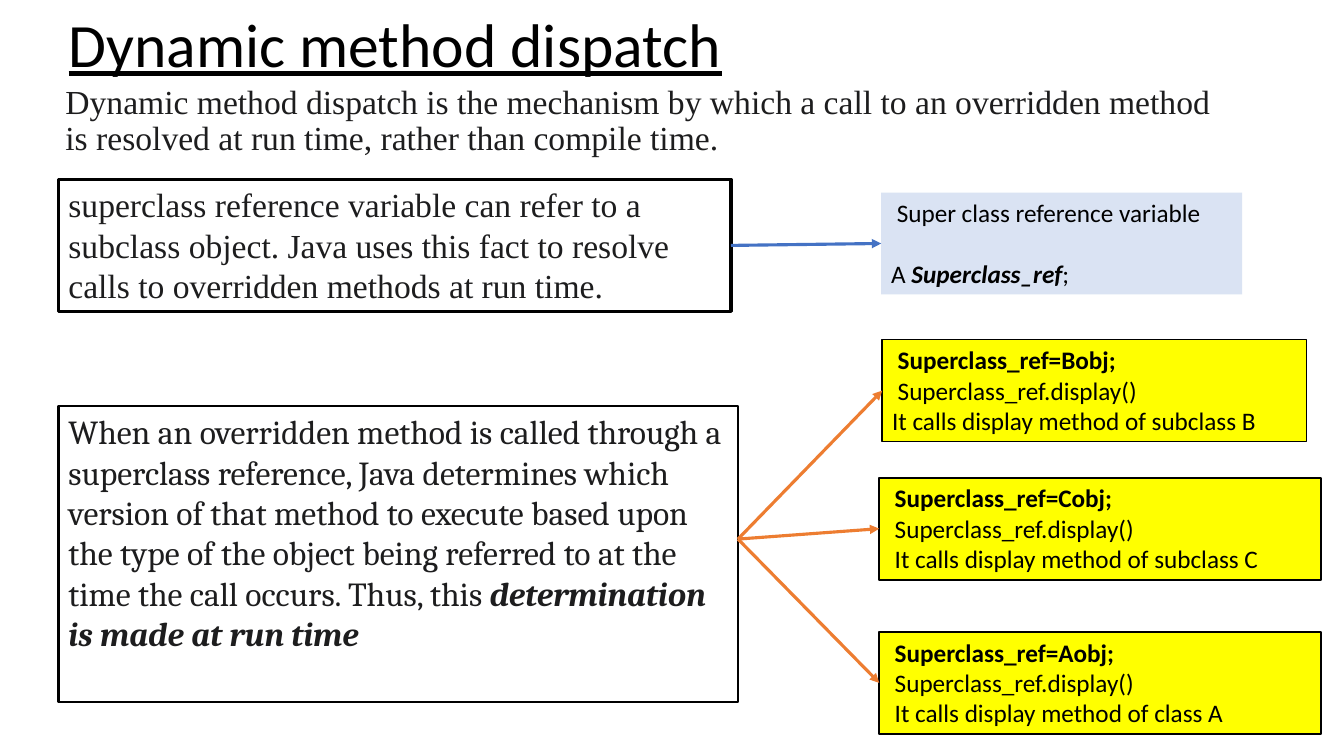
from dataclasses import dataclass

from lxml.etree import SubElement
from pptx import Presentation
from pptx.dml.color import RGBColor as RGB
from pptx.enum.shapes import MSO_CONNECTOR as LINK, MSO_SHAPE as SHAPE
from pptx.enum.text import MSO_ANCHOR as ANCHOR, MSO_AUTO_SIZE as FIT, PP_ALIGN as ALIGN
from pptx.oxml.ns import qn
from pptx.util import Inches, Pt


@dataclass(frozen=True)
class Theme:
    black: str = "000000"
    ink: str = "1D1D1E"
    pale: str = "DAE3F3"
    yellow: str = "FFFF00"
    blue: str = "4472C4"
    orange: str = "ED7D31"
    sans: str = "Calibri"
    roman: str = "Times New Roman"
    serif: str = "Cambria"
    title: int = 44
    body: int = 24
    code: int = 18


T = Theme()
WIDE, HIGH = Inches(13.33), Inches(7.5)
COL, ROW = WIDE / 100, HIGH / 100  # grid of 100 columns by 100 rows
PAD = Pt(4)  # small indent before code lines


def place(box):
    """Turn grid columns and rows into slide lengths."""
    left, top, width, height = box
    return [int(n) for n in (left * COL, top * ROW, width * COL, height * ROW)]


def style(para, face, size, color):
    para.alignment = ALIGN.LEFT
    font = para.font
    font.name, font.size = face, Pt(size)
    font.color.rgb = RGB.from_string(color)


def write(para, runs, face, size, color):
    """Add (text, bold, italic) runs to a paragraph."""
    for text, bold, slant in runs:
        run = para.add_run()
        run.text = text
        if bold:
            run.font.bold = True
        if slant:
            run.font.italic = True
    style(para, face, size, color)


def panel(slide, box, fill=None, edge=None):
    """Draw a plain rectangle ready for text."""
    shape = slide.shapes.add_shape(SHAPE.RECTANGLE, *place(box))
    shape.shadow.inherit = False
    if fill:
        shape.fill.solid()
        shape.fill.fore_color.rgb = RGB.from_string(fill)
    else:
        shape.fill.background()
    if edge:
        shape.line.color.rgb = RGB.from_string(T.black)
        shape.line.width = Pt(edge)
    else:
        shape.line.fill.background()
    shape.text_frame.word_wrap = True
    shape.text_frame.vertical_anchor = ANCHOR.TOP
    return shape


def head(slide, box, text):
    title = slide.shapes.title
    title.left, title.top, title.width, title.height = place(box)
    frame = title.text_frame
    frame.text = text
    frame.auto_size = FIT.NONE
    frame.vertical_anchor = ANCHOR.MIDDLE
    para = frame.paragraphs[0]
    para.line_spacing = 0.9
    style(para, T.sans, T.title, T.black)
    para.font.underline = True


def intro(slide, box, text):
    frame = slide.shapes.add_textbox(*place(box)).text_frame
    frame.word_wrap = True
    para = frame.paragraphs[0]
    para.line_spacing = 0.9
    write(para, [(text, 0, 0)], T.roman, T.body, T.ink)


def claim(slide, box, runs, face, edge):
    """Outlined box with one statement."""
    shape = panel(slide, box, edge=edge)
    write(shape.text_frame.paragraphs[0], runs, face, T.body, T.ink)
    return shape


def sample(slide, box, lines, fill, edge=None):
    """Filled box of code lines: (runs, indented, space before)."""
    shape = panel(slide, box, fill, edge)
    frame = shape.text_frame
    for i, (runs, inset, gap) in enumerate(lines):
        para = frame.add_paragraph() if i else frame.paragraphs[0]
        if inset:
            para._p.get_or_add_pPr().set("marL", str(PAD))
        if gap:
            para.space_before = Pt(gap)
        write(para, runs, T.sans, T.code, T.black)
    return shape


def arrow(slide, start, end, color, drop=0.5):
    """Link the right side of one box to the left middle of another."""
    link = slide.shapes.add_connector(
        LINK.STRAIGHT,
        start.left + start.width, int(start.top + start.height * drop),
        end.left, end.top + end.height // 2)
    link.line.color.rgb = RGB.from_string(color)
    link.line.width = Pt(2.25)
    SubElement(link.line._get_or_add_ln(), qn("a:tailEnd"), type="triangle")
    SubElement(link._element.spPr, qn("a:effectLst"))


def main():
    deck = Presentation()
    deck.slide_width, deck.slide_height = WIDE, HIGH
    slide = deck.slides.add_slide(deck.slide_layouts[5])

    # Heading and definition
    head(slide, (4.35, 0.93, 86.27, 10.67), "Dynamic method dispatch")
    intro(slide, (4.13, 10.67, 88.37, 11.73),
          "Dynamic method dispatch is the mechanism by which a call to an "
          "overridden method is resolved at run time, rather than compile time.")

    # Reference variable and its declaration
    fact = claim(slide, (4.35, 23.73, 50.04, 17.47), [
        ("superclass reference variable can refer to a subclass object. Java "
         "uses this fact to resolve calls to overridden methods at run time.", 0, 0),
    ], T.roman, 2.25)
    decl = sample(slide, (65.57, 25.47, 26.86, 13.47), [
        ([("Super class reference variable", 0, 0)], True, 0),
        ([("A ", 0, 0), ("Superclass_ref", 1, 1), (";", 0, 0)], False, 22),
    ], T.pale)
    arrow(slide, fact, decl, T.blue)

    # Run-time choice and the three calls it leads to
    choice = claim(slide, (4.35, 53.73, 50.56, 39.07), [
        ("When an overridden method is called through a superclass reference, "
         "Java determines which version of that method to execute based upon "
         "the type of the object being referred to at the time the call "
         "occurs. Thus, this ", 0, 0),
        ("determination is made at run time", 1, 1),
    ], T.serif, 1.5)
    calls = [
        ("B", "subclass", (65.64, 44.93, 31.58, 13.47), 1, False),
        ("C", "subclass", (65.42, 63.2, 32.86, 13.47), 1.5, True),
        ("A", "class", (65.42, 83.6, 32.86, 13.47), 1.5, True),
    ]
    for name, kind, box, edge, inset in calls:
        call = sample(slide, box, [
            ([(f"Superclass_ref={name}obj;", 1, 0)], True, 0),
            ([("Superclass_ref.display()", 0, 0)], True, 0),
            ([(f"It calls display method of {kind} {name}", 0, 0)], inset, 0),
        ], T.yellow, edge)
        arrow(slide, choice, call, T.orange, drop=0.45)

    deck.save("out.pptx")


if __name__ == "__main__":
    main()
